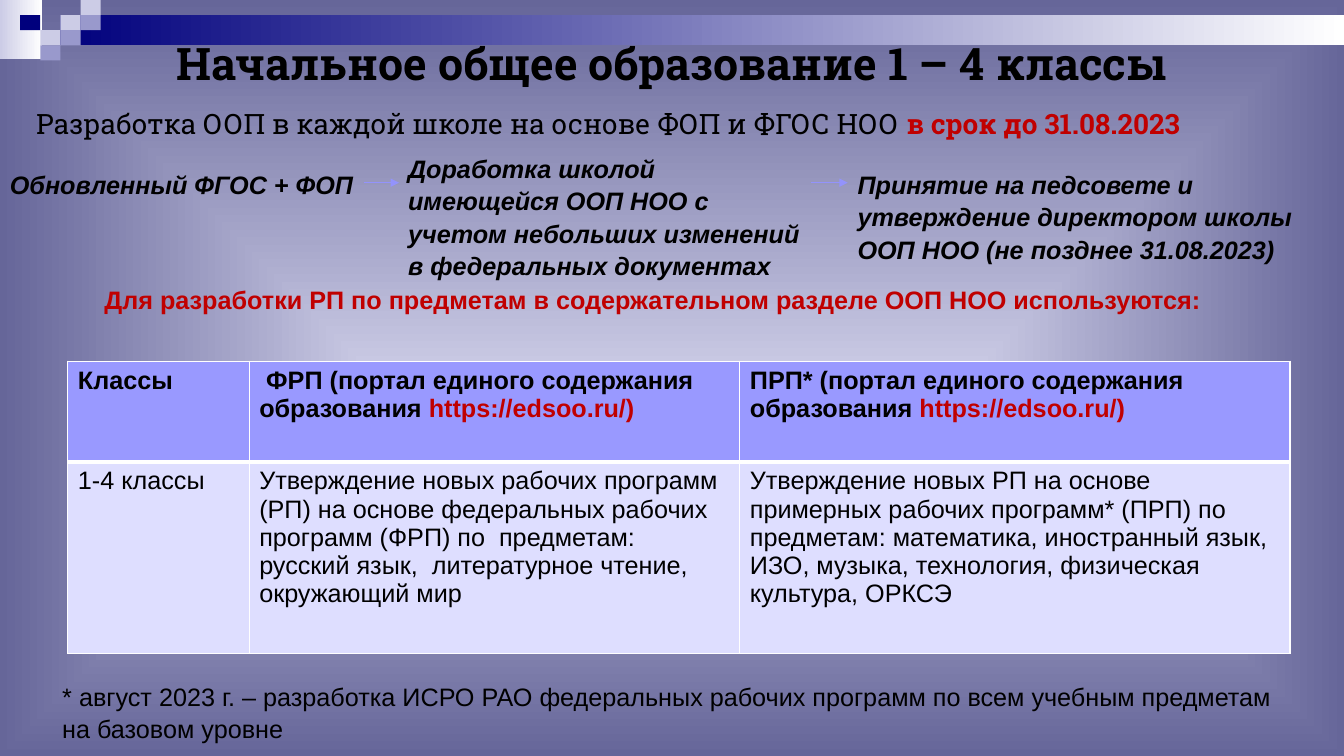
from pptx import Presentation
from pptx.dml.color import RGBColor
from pptx.enum.shapes import MSO_CONNECTOR as Connector, MSO_SHAPE as Shape
from pptx.enum.text import MSO_ANCHOR as Anchor, PP_ALIGN as Align
from pptx.oxml.ns import qn
from pptx.oxml.xmlchemy import OxmlElement as Element
from pptx.util import Pt

COLORS = {
    "black": "000000", "red": "C00000", "white": "FFFFFF", "navy": "00007D",
    "mist": "CCCCE6", "lilac": "9999CC", "slate": "666699", "arrow": "9393FC",
    "header": "9999FF", "body": "DEDEFF",
}
CELL_W, CELL_H = 14.4, 10.8
SQUARES = [(3, 1, "mist"), (4, 0, "mist"), (4, 1, "lilac"), (2, 2, "mist"),
           (1, 1, "navy"), (3, 2, "lilac"), (2, 3, "lilac")]
COLUMNS = [129.5, 350.5, 393]
ROWS = [72, 137]
PORTAL = "https://edsoo.ru/)"
TABLE = [
    [[("Классы", "black")],
     [(" ФРП (портал единого содержания образования ", "black"), (PORTAL, "red")],
     [("ПРП* (портал единого содержания образования ", "black"), (PORTAL, "red")]],
    [[("1-4 классы", "black")],
     [("Утверждение новых рабочих программ (РП) на основе федеральных рабочих программ (ФРП) "
       "по  предметам: русский язык,  литературное чтение, окружающий мир", "black")],
     [("Утверждение новых РП на основе примерных рабочих программ* (ПРП) по  предметам: "
       "математика, иностранный язык, ИЗО, музыка, технология, физическая культура, ОРКСЭ",
       "black")]],
]


def rgb(name):
    return RGBColor.from_string(COLORS[name])


def child(parent, tag, **attributes):
    element = Element(tag)
    for key, value in attributes.items():
        element.set(key, str(value))
    parent.append(element)
    return element


def set_gradient(fill, start, end):
    fill.gradient()
    for stop, name in zip(fill.gradient_stops, (start, end)):
        stop.color.rgb = rgb(name)


def paint_background(page):
    set_gradient(page.background.fill, "mist", "slate")
    linear = page.element.find(".//" + qn("a:lin"))
    gradient = linear.getparent()
    gradient.remove(linear)
    radial = child(gradient, "a:path", path="shape")
    child(radial, "a:fillToRect", l=50000, t=50000, r=50000, b=50000)


def add_block(page, left, top, width, height, color, end=None):
    block = page.shapes.add_shape(Shape.RECTANGLE, Pt(left), Pt(top), Pt(width), Pt(height))
    block.shadow.inherit = False
    block.line.fill.background()
    if end:
        set_gradient(block.fill, color, end)
        block.fill.gradient_angle = 0
    else:
        block.fill.solid()
        block.fill.fore_color.rgb = rgb(color)


def add_run(para, text, color="black", size=18, font="Arial", bold=False, italic=False):
    span = para.add_run()
    span.text = text
    span.font.name = font
    span.font.size = Pt(size)
    span.font.bold = bold
    span.font.italic = italic
    span.font.color.rgb = rgb(color)


def add_text(page, left, top, width, height, text, align=Align.LEFT, spacing=1.07, **style):
    box = page.shapes.add_textbox(Pt(left), Pt(top), Pt(width), Pt(height))
    box.text_frame.word_wrap = True
    para = box.text_frame.paragraphs[0]
    para.alignment = align
    para.line_spacing = spacing
    add_run(para, text, **style)
    return box


def add_arrow(page, left, right, y):
    arrow = page.shapes.add_connector(Connector.STRAIGHT, Pt(left), Pt(y), Pt(right), Pt(y))
    arrow.line.color.rgb = rgb("arrow")
    arrow.line.width = Pt(0.75)
    child(arrow.line._get_or_add_ln(), "a:tailEnd", type="triangle")
    child(arrow.element.spPr, "a:effectLst")
    return arrow


def set_borders(cell, top, bottom):
    properties = cell._tc.get_or_add_tcPr()
    for side, width in (("L", 1), ("R", 1), ("T", top), ("B", bottom)):
        line = child(properties, "a:ln" + side, w=Pt(width))
        child(child(line, "a:solidFill"), "a:srgbClr", val=COLORS["white"])


def add_programs_table(page):
    frame = page.shapes.add_table(len(ROWS), len(COLUMNS), Pt(48.5), Pt(258),
                                  Pt(sum(COLUMNS)), Pt(sum(ROWS)))
    table = frame.table
    table.horz_banding = False
    for column, width in zip(table.columns, COLUMNS):
        column.width = Pt(width)
    for index, (row, height) in enumerate(zip(table.rows, ROWS)):
        row.height = Pt(height)
        heading = index == 0
        for cell, runs in zip(row.cells, TABLE[index]):
            set_borders(cell, 1 if heading else 3, 3 if heading else 1)
            cell.fill.solid()
            cell.fill.fore_color.rgb = rgb("header" if heading else "body")
            for text, color in runs:
                add_run(cell.text_frame.paragraphs[0], text, color, bold=heading)


def main():
    deck = Presentation()
    deck.slide_width, deck.slide_height = Pt(960), Pt(540)
    page = deck.slides.add_slide(deck.slide_layouts[6])

    paint_background(page)
    add_block(page, 0, 0, 30, 42, "mist", "white")
    add_block(page, 43.2, CELL_H, 916.8, 2 * CELL_H, "navy", "white")
    for column, row, color in SQUARES:
        add_block(page, column * CELL_W, row * CELL_H, CELL_W, CELL_H, color)

    title = add_text(page, 48, 22, 864, 46, "Начальное общее образование 1 – 4 классы",
                     Align.CENTER, 1, size=32, font="Roboto Slab", bold=True)
    title.text_frame.margin_top = title.text_frame.margin_bottom = 0
    title.text_frame.vertical_anchor = Anchor.MIDDLE
    goal = add_text(page, 18.7, 72.7, 929.5, 36,
                    "Разработка ООП в каждой школе на основе ФОП и ФГОС НОО ",
                    spacing=1, size=20, font="Roboto Slab")
    add_run(goal.text_frame.paragraphs[0], "в срок до 31.08.2023", "red", 20,
            "Roboto Slab", bold=True)

    standard = add_text(page, 0, 116, 260, 29, "Обновленный ФГОС + ФОП", bold=True, italic=True)
    add_text(page, 284.4, 104.4, 294.5, 94.5,
             "Доработка школой имеющейся ООП НОО с учетом небольших изменений "
             "в федеральных документах", bold=True, italic=True)
    add_text(page, 605.5, 116, 342.7, 72.7,
             "Принятие на педсовете и утверждение директором школы ООП НОО "
             "(не позднее 31.08.2023)", bold=True, italic=True)
    add_arrow(page, 260, 285, 130.5).begin_connect(standard, 3)
    add_arrow(page, 579, 605.5, 130.5)

    add_text(page, 48, 198, 836.6, 29,
             "Для разработки РП по предметам в содержательном разделе ООП НОО используются:",
             Align.CENTER, color="red", bold=True)
    add_programs_table(page)
    add_text(page, 37.4, 481.7, 882.7, 51,
             "* август 2023 г. – разработка ИСРО РАО федеральных рабочих программ "
             "по всем учебным предметам на базовом уровне")
    deck.save("out.pptx")


if __name__ == "__main__":
    main()
